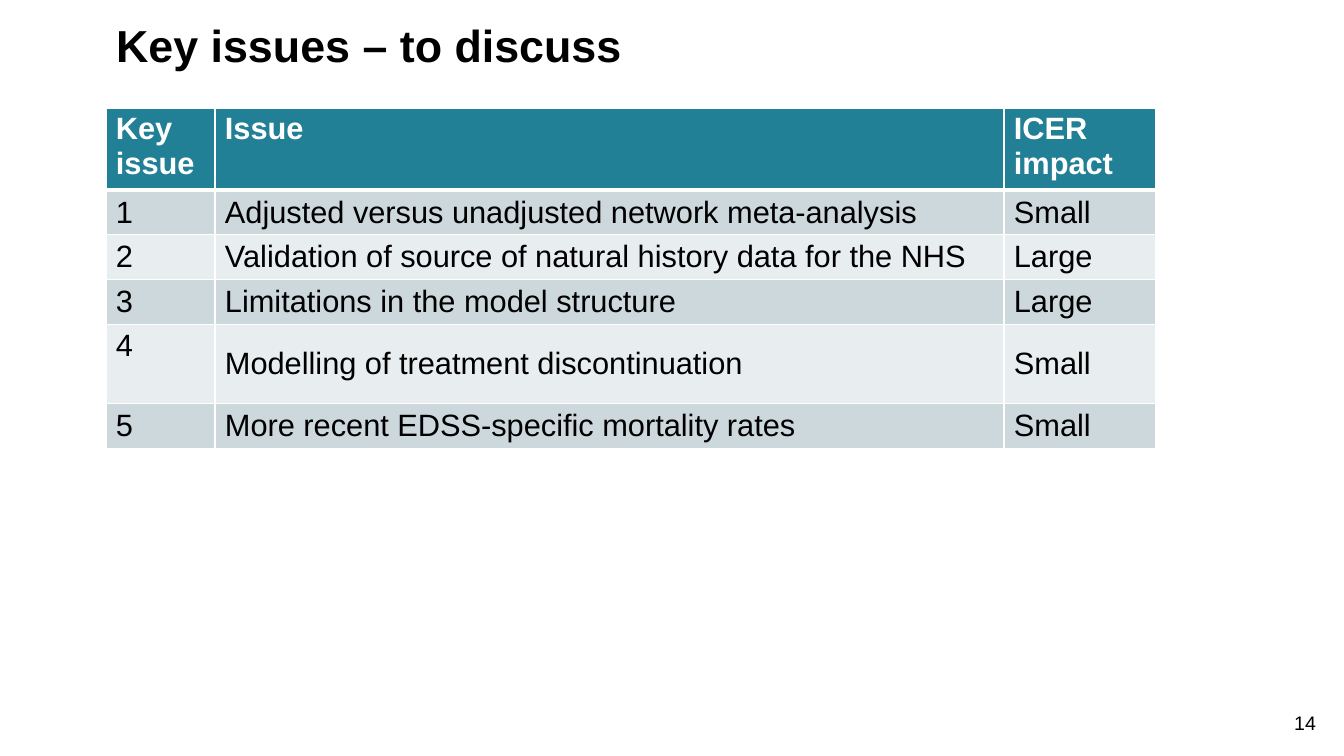
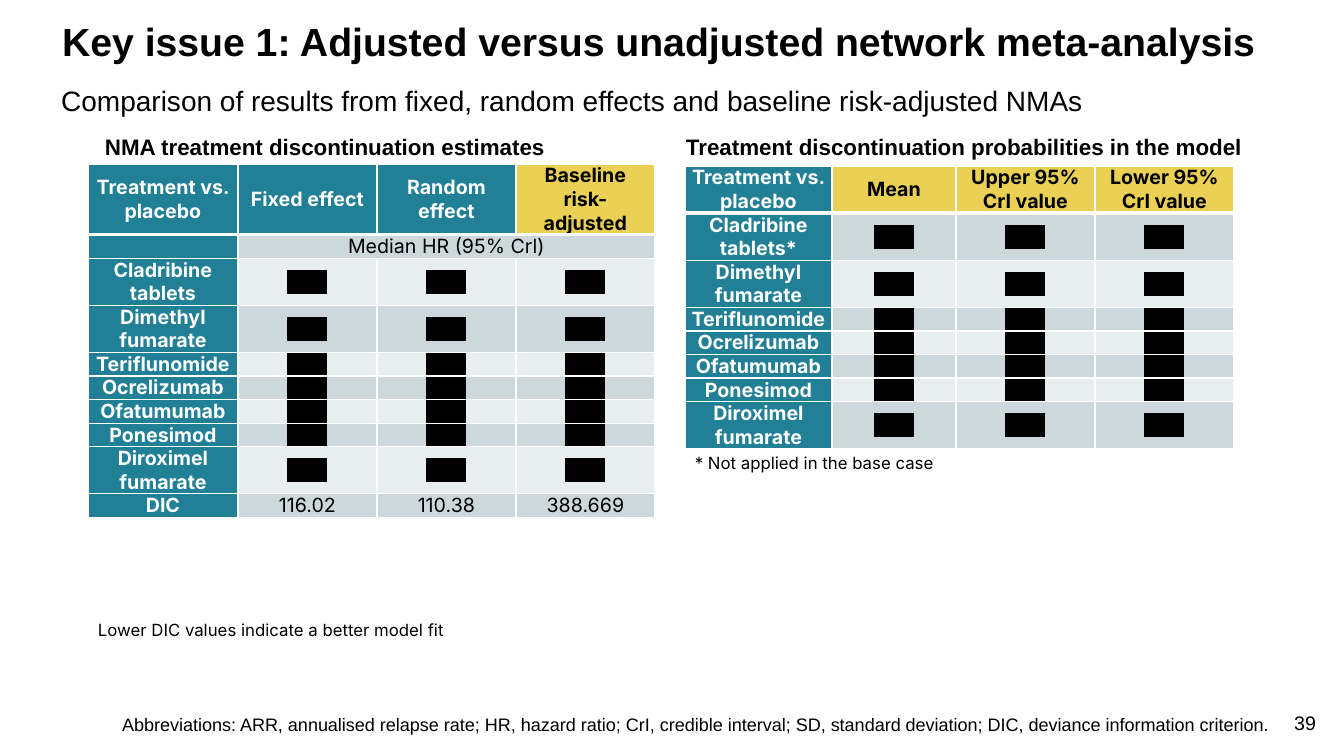
import pptx
import pptx.util
import pptx.dml.color
import pptx.enum.text
import pptx.oxml
import pptx.oxml.ns

PX = 9071
INK, PAPER, TEAL, GOLD = "000000", "FFFFFF", "228096", "EAD054"
BANDS = ["CDD8DD", "E8EDEF"]
ALIGN = pptx.enum.text.PP_ALIGN
ANCHOR = pptx.enum.text.MSO_ANCHOR
NS = pptx.oxml.ns.nsdecls("a")


def tint(code):
    return pptx.dml.color.RGBColor.from_string(code)


def write(par, text, size, name, ink=INK, **form):
    run = par.add_run()
    run.text = text
    run.font.color.rgb = tint(ink)
    for key, val in dict(size=pptx.util.Pt(size), name=name, **form).items():
        setattr(run.font, key, val)
    return run


deck = pptx.Presentation()
deck.slide_width, deck.slide_height = 1344 * PX, 756 * PX
first = deck.slides.add_slide(deck.slide_layouts[5])
second = deck.slides.add_slide(deck.slide_layouts[3])

holders = [
    (first, 0, (106, 19, 1186, 66), "Key issues – to discuss", 32, True),
    (second, 0, (52, 18, 1240, 66), "Key issue 1: Adjusted versus unadjusted network meta-analysis", 28, True),
    (second, 1, (51, 82, 1240, 57),
     "Comparison of results from fixed, random effects and baseline risk-adjusted NMAs", 20, False),
    (second, 2, (112, 711, 1196, 40),
     "Abbreviations: ARR, annualised relapse rate; HR, hazard ratio; CrI, credible interval; "
     "SD, standard deviation; DIC, deviance information criterion.", 12.9, False),
]
for slide, spot, area, text, size, bold in holders:
    box = slide.placeholders[spot]
    box.left, box.top, box.width, box.height = [n * PX for n in area]
    frame = box.text_frame
    frame.auto_size = pptx.enum.text.MSO_AUTO_SIZE.NONE
    frame.vertical_anchor = ANCHOR.TOP
    par = frame.paragraphs[0]
    props = par._p.get_or_add_pPr()
    props.set("marL", "0")
    props.set("indent", "0")
    props.append(pptx.oxml.parse_xml(f"<a:buNone {NS}/>"))
    par.alignment = ALIGN.LEFT
    par.line_spacing = 0.9
    par.space_before = pptx.util.Pt(0)
    write(par, text, size, "Arial", bold=bold)

head = dict(size=16, name="Arial", bold=True)
note = dict(size=12, name="Inter")
page = dict(size=14, name="Arial")
labels = [
    (first, (1275, 706, 51, 40), "14", page, ALIGN.RIGHT, 0),
    (second, (1275, 706, 51, 40), "39", page, ALIGN.RIGHT, 0),
    (second, (87, 128, 672, 37), "NMA treatment discontinuation estimates", head, ALIGN.LEFT, 8),
    (second, (668, 128, 672, 37), "Treatment discontinuation probabilities in the model", head, ALIGN.LEFT, 8),
    (second, (88, 615, 1189, 30), "Lower DIC values indicate a better model fit", note, ALIGN.LEFT, 0),
    (second, (685, 448, 541, 30), "* Not applied in the base case", note, ALIGN.LEFT, 0),
]
for slide, area, text, form, align, dent in labels:
    frame = slide.shapes.add_textbox(*[n * PX for n in area]).text_frame
    frame.word_wrap = True
    par = frame.paragraphs[0]
    par._p.get_or_add_pPr().set("marL", str(dent * PX))
    par.alignment = align
    write(par, text, **form)

issues = [
    ["Key issue", "Issue", "ICER impact"],
    ["1", "Adjusted versus unadjusted network meta-analysis", "Small"],
    ["2", "Validation of source of natural history data for the NHS", "Large"],
    ["3", "Limitations in the model structure", "Large"],
    ["4", "Modelling of treatment discontinuation", "Small"],
    ["5", "More recent EDSS-specific mortality rates", "Small"],
]
MASK = "XXX"
drugs = ["Dimethyl fumarate", "Teriflunomide", "Ocrelizumab", "Ofatumumab", "Ponesimod", "Diroximel fumarate"]
ratios = [
    ["Treatment vs. placebo", "Fixed effect", "Random effect", "Baseline risk-adjusted"],
    ["", "Median HR (95% Crl)", "", ""],
    *[[drug] + [MASK] * 3 for drug in ["Cladribine tablets"] + drugs],
    ["DIC", "116.02", "110.38", "388.669"],
]
odds = [
    ["Treatment vs. placebo", "Mean", "Upper 95% CrI value", "Lower 95% CrI value"],
    *[[drug] + [MASK] * 3 for drug in ["Cladribine tablets*"] + drugs],
]

plain = dict(size=22, name="Arial", align=ALIGN.LEFT, top=ANCHOR.TOP, pad=(10, 4), tall=(78, 44), side=False)
dense = dict(size=14, name="Inter", align=ALIGN.CENTER, top=ANCHOR.MIDDLE, pad=(6, 0), tall=(47, 23), side=True)
tables = [
    (first, (106, 108), [109, 789, 152], issues, plain, []),
    (second, (88, 164), [150, 139, 139, 139], ratios, dense, [3]),
    (second, (685, 166), [147, 124, 139, 139], odds, dense, [1, 2, 3]),
]
grids = []
for slide, (left, top), wide, rows, form, gold in tables:
    tall = [form["tall"][0 if " " in row[0] else 1] for row in rows]
    area = (left, top, sum(wide), sum(tall))
    grid = slide.shapes.add_table(len(rows), len(wide), *[n * PX for n in area]).table
    grids.append(grid)
    for col, size in zip(grid.columns, wide):
        col.width = size * PX
    for y, row in enumerate(rows):
        grid.rows[y].height = tall[y] * PX
        for x, text in enumerate(row):
            cell = grid.cell(y, x)
            dark = y == 0 or (form["side"] and x == 0)
            light = y == 0 and x in gold
            cell.fill.solid()
            cell.fill.fore_color.rgb = tint(GOLD if light else TEAL if dark else BANDS[(y + 1) % 2])
            cell.margin_left = cell.margin_right = form["pad"][0] * PX
            cell.margin_top = cell.margin_bottom = form["pad"][1] * PX
            cell.vertical_anchor = form["top"] if y == 0 else ANCHOR.MIDDLE
            for spot, edge in enumerate(["lnL", "lnR", "lnT", "lnB"]):
                thick = 3 if (y, edge) in [(0, "lnB"), (1, "lnT")] else 1
                cell._tc.get_or_add_tcPr().insert(spot, pptx.oxml.parse_xml(
                    f'<a:{edge} {NS} w="{thick * 12700}"><a:solidFill>'
                    f'<a:srgbClr val="{PAPER}"/></a:solidFill></a:{edge}>'))
            par = cell.text_frame.paragraphs[0]
            par.alignment = form["align"]
            if not text:
                par._p.get_or_add_endParaRPr().set("sz", str(form["size"] * 100))
                continue
            ink = PAPER if dark and not light else INK
            run = write(par, text, form["size"], form["name"], ink, bold=dark)
            if text == MASK:
                run.font.underline = True
                run._r.rPr.find(pptx.oxml.ns.qn("a:solidFill")).addnext(pptx.oxml.parse_xml(
                    f'<a:highlight {NS}><a:srgbClr val="{INK}"/></a:highlight>'))

grids[0].rows[4].height = 79 * PX
grids[0].cell(4, 0).vertical_anchor = ANCHOR.TOP
grids[1].cell(1, 1).merge(grids[1].cell(1, 3))

deck.save("out.pptx")
